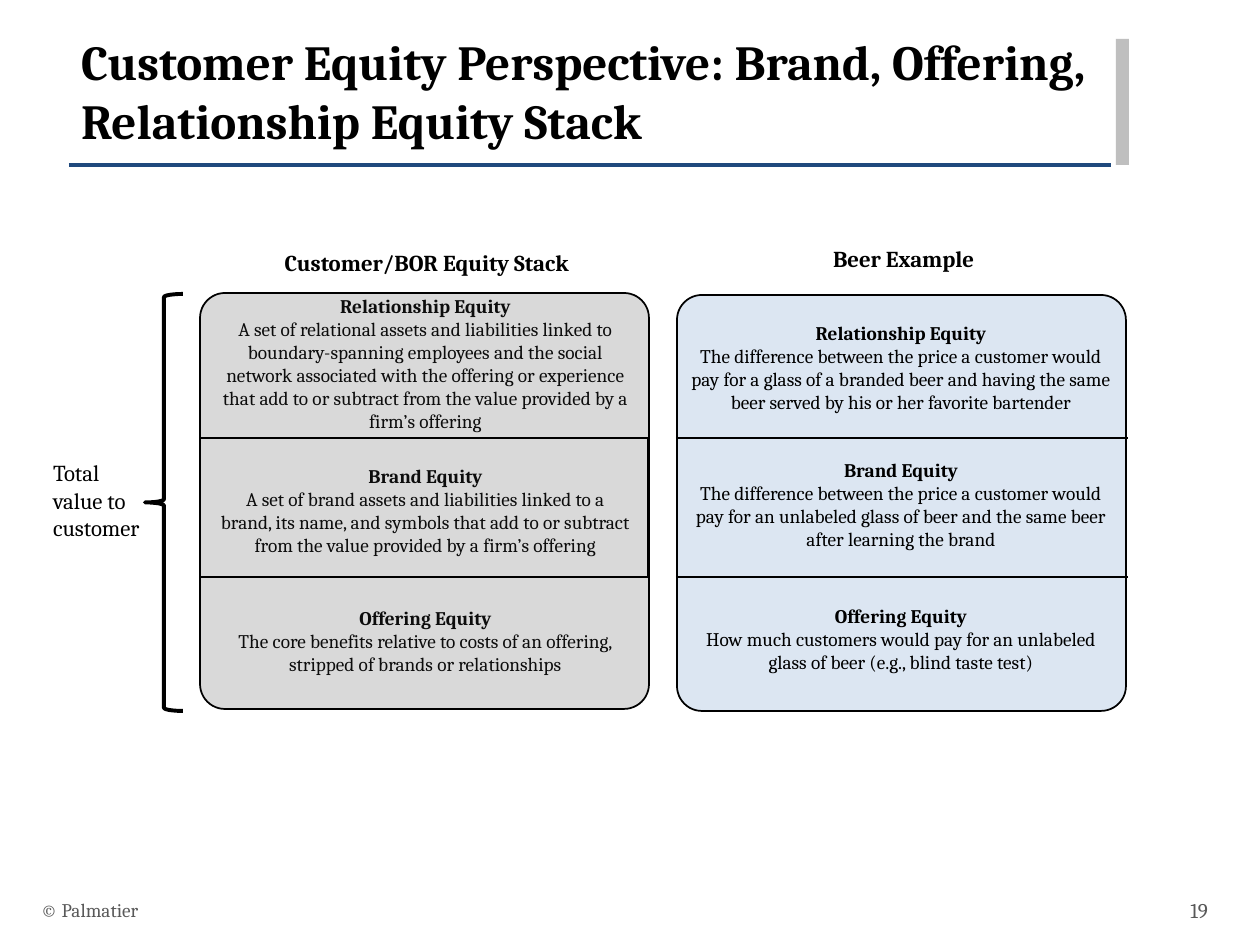
from dataclasses import dataclass
from lxml.etree import SubElement
from pptx import Presentation
from pptx.dml.color import RGBColor
from pptx.enum.shapes import MSO_CONNECTOR, MSO_SHAPE
from pptx.enum.text import MSO_ANCHOR, PP_ALIGN
from pptx.oxml.ns import qn
from pptx.util import Emu, Pt


@dataclass(frozen=True)
class Theme:
    font: str = "Cambria"
    black: str = "000000"
    ink: str = "0D0D0D"
    navy: str = "1F497D"
    bar: str = "BFBFBF"
    gray: str = "D9D9D9"
    blue: str = "DCE6F2"
    muted: str = "595959"
    title: int = 28
    label: int = 13
    page: int = 12
    body: int = 11


def px(num):
    return Emu(round(num * 914400 / 126))


class Deck:
    """Holds the theme and the current slide, and draws each kind of element."""

    def __init__(self, theme):
        self.theme = theme
        self.file = Presentation()
        self.file.slide_width, self.file.slide_height = px(1260), px(945)
        self.slide = self.file.slides.add_slide(self.file.slide_layouts[6])

    def shape(self, kind, box, fill=None, line=None, width=1, round_by=None):
        item = self.slide.shapes.add_shape(kind, *map(px, box))
        item.shadow.inherit = False
        if round_by is not None:
            item.adjustments[0] = round_by
        if fill:
            item.fill.solid()
            item.fill.fore_color.rgb = RGBColor.from_string(fill)
        else:
            item.fill.background()
        if line:
            item.line.color.rgb = RGBColor.from_string(line)
            item.line.width = Pt(width)
        else:
            item.line.fill.background()

    def line(self, left, right, top, color, width):
        ends = map(px, (left, top, right, top))
        item = self.slide.shapes.add_connector(MSO_CONNECTOR.STRAIGHT, *ends)
        item.line.color.rgb = RGBColor.from_string(color)
        item.line.width = Pt(width)
        SubElement(item._element.spPr, qn("a:effectLst"))

    def text(self, box, paras, size, color, align=PP_ALIGN.LEFT,
             anchor=MSO_ANCHOR.TOP, inset=(11, 5)):
        frame = self.slide.shapes.add_textbox(*map(px, box)).text_frame
        frame.word_wrap = True
        frame.vertical_anchor = anchor
        frame.margin_left = frame.margin_right = px(inset[0])
        frame.margin_top = frame.margin_bottom = px(inset[1])
        for pos, (words, bold) in enumerate(paras):
            para = frame.add_paragraph() if pos else frame.paragraphs[0]
            para.alignment = align
            run = para.add_run()
            run.text = words
            run.font.name = self.theme.font
            run.font.size = Pt(size)
            run.font.bold = bold
            run.font.color.rgb = RGBColor.from_string(color)


STACK = [
    (294, "Relationship Equity",
     "A set of relational assets and liabilities linked to boundary-spanning "
     "employees and the social network associated with the offering or "
     "experience that add to or subtract from the value provided by a firm’s "
     "offering"),
    (441, "Brand Equity",
     "A set of brand assets and liabilities linked to a brand, its name, and "
     "symbols that add to or subtract from the value provided by a firm’s "
     "offering"),
    (571, "Offering Equity",
     "The core benefits relative to costs of an offering, stripped of brands "
     "or relationships"),
]
BEER = [
    (316, 105, "Relationship Equity",
     "The difference between the price a customer would pay for a glass of a "
     "branded beer and having the same beer served by his or her favorite "
     "bartender"),
    (453, 105, "Brand Equity",
     "The difference between the price a customer would pay for an unlabeled "
     "glass of beer and the same beer after learning the brand"),
    (599, 82, "Offering Equity",
     "How much customers would pay for an unlabeled glass of beer (e.g., "
     "blind taste test)"),
]


def main():
    theme = Theme()
    deck = Deck(theme)
    mid, center = MSO_ANCHOR.MIDDLE, PP_ALIGN.CENTER

    deck.line(69, 1111, 165, theme.navy, 2)
    deck.shape(MSO_SHAPE.RECTANGLE, (1116, 39, 13, 126), theme.bar)
    title = "Customer Equity Perspective: Brand, Offering, Relationship Equity Stack"
    deck.text((69, 26, 1041, 111), [(title, True)], theme.title, theme.black,
              inset=(12, 6))

    deck.shape(MSO_SHAPE.ROUNDED_RECTANGLE, (677, 295, 449, 416), theme.blue,
               theme.black, round_by=0.06)
    for top, high, head, words in BEER:
        deck.text((678, top, 446, high), [(head, True), (words, False)],
                  theme.body, theme.black, center)
    for top in (438, 577):
        deck.line(676, 1128, top, theme.black, 0.75)

    deck.shape(MSO_SHAPE.LEFT_BRACE, (145, 294, 38, 417), None, theme.black, 2.25)
    deck.text((42, 454, 122, 95), [("Total value to customer", False)],
              theme.label, theme.black)
    for left, top, head in ((202, 244, "Customer/BOR Equity Stack"),
                            (679, 240, "Beer Example")):
        deck.text((left, top, 449, 39), [(head, True)], theme.label,
                  theme.black, center)

    deck.shape(MSO_SHAPE.ROUNDED_RECTANGLE, (200, 293, 449, 416), theme.gray,
               theme.black, round_by=0.06)
    deck.shape(MSO_SHAPE.RECTANGLE, (200, 438, 448, 139), theme.gray, theme.black)
    for top, head, words in STACK:
        deck.text((201, top, 449, 139), [(head, True), (words, False)],
                  theme.body, theme.ink, center, mid, (18, 0))

    deck.text((28, 885, 844, 50), [("© Palmatier", False)], theme.body,
              theme.muted, anchor=mid, inset=(13, 6))
    deck.text((1144, 885, 77, 50), [("19", False)], theme.page, theme.muted,
              PP_ALIGN.RIGHT, mid, (13, 6))
    deck.file.save("out.pptx")


if __name__ == "__main__":
    main()
